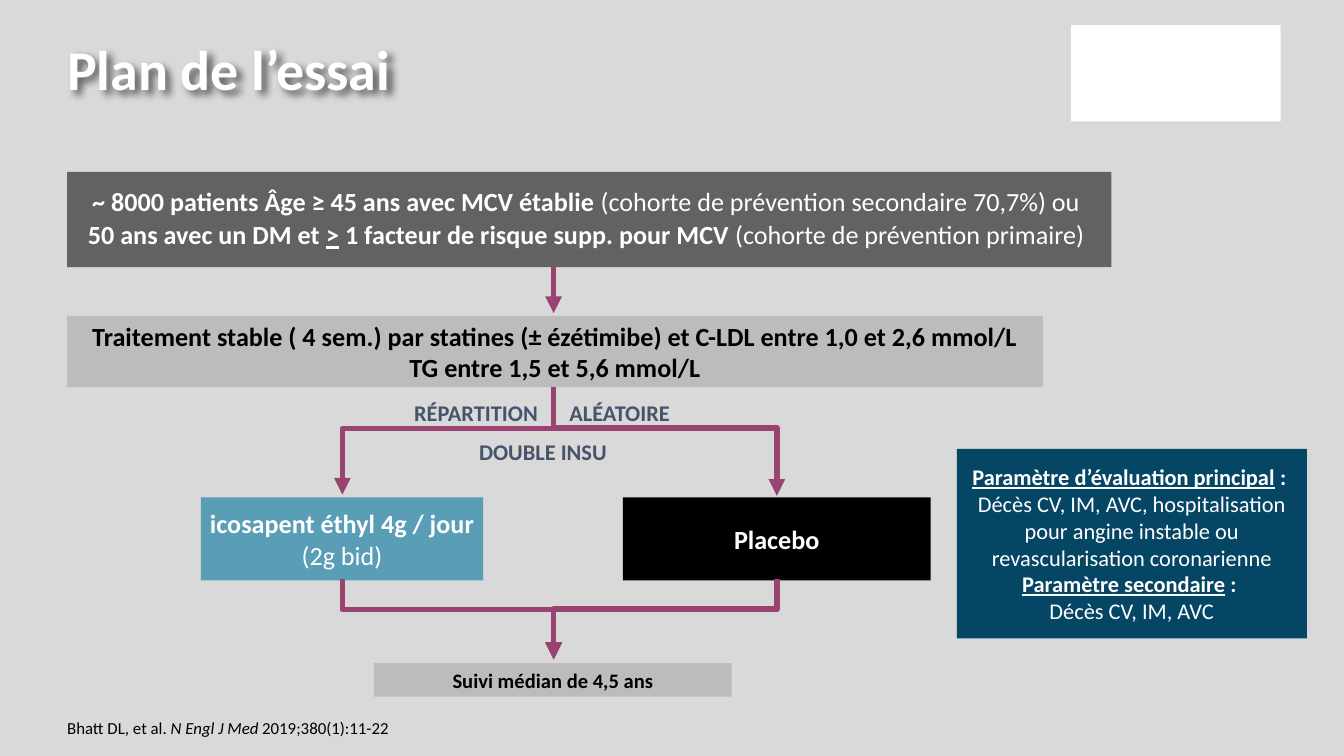
from pptx import Presentation
from pptx.dml.color import RGBColor
from pptx.enum.shapes import MSO_CONNECTOR as Line, MSO_SHAPE as Shape
from pptx.enum.text import MSO_ANCHOR as Anchor, PP_ALIGN as Align
from pptx.oxml import parse_xml
from pptx.oxml.ns import nsdecls
from pptx.util import Pt

FONT = "Calibri"
PLUM = "994371"
SLATE = "44546A"

# Content: each paragraph is a list of (text, style); b bold, u underline, i italic
TITLE = [[("Plan de l’essai", "b")]]
SOURCE = [[("Bhatt DL, et al. ", ""), ("N Engl J Med", "i"),
           (" 2019;380(1):11-22", "")]]
COHORT = [
    [("~ 8000 patients Âge ≥ 45 ans avec MCV établie ", "b"),
     ("(cohorte de prévention secondaire 70,7%) ou ", "")],
    [("50 ans avec un DM et ", "b"), (">", "bu"),
     (" 1 facteur de risque supp. pour MCV ", "b"),
     ("(cohorte de prévention primaire) ", "")],
]
STABLE = [
    [("Traitement stable ( 4 sem.) par statines (± ézétimibe) "
      "et C-LDL entre 1,0 et 2,6 mmol/L", "b")],
    [("TG entre 1,5 et 5,6 mmol/L", "b")],
]
DRUG = [[("icosapent éthyl 4g / jour", "b")], [("(2g bid)", "")]]
PLACEBO = [[("Placebo", "b")]]
FOLLOW = [[("Suivi médian de 4,5 ans", "b")]]
GOALS = [
    [("Paramètre d’évaluation principal", "bu"), (" : ", "b")],
    [("Décès CV, IM, AVC, hospitalisation pour angine instable "
      "ou revascularisation coronarienne", "")],
    [("Paramètre secondaire", "bu"), (" : ", "b")],
    [("Décès CV, IM, AVC", "")],
]

# Boxes: left, top, width, height, fill, alpha %, text, size, colour, insets (x, y)
BOXES = [
    (200.5, 355.3, 191.5, 18, "A1A1A1", 50, FOLLOW, 11, "000000", (7.2, 0)),
    (36, 169.2, 522.7, 38.2, "A1A1A1", 50, STABLE, 14, "000000", (7.2, 0)),
    (36, 92, 559.4, 51.1, "626262", 100, COHORT, 14, "FFFFFF", (2.9, 3.6)),
    (512.6, 240.5, 187.6, 101.5, "064665", 100, GOALS, 12, "FFFFFF", (7.2, 3.6)),
    (573.8, 13.5, 112.3, 51.6, "FFFFFF", 100, [], 12, "000000", (0, 0)),
    (107.7, 266.4, 151.2, 44.6, "5A9DB6", 100, DRUG, 14, "FFFFFF", (2.2, 3.6)),
    (333.7, 266.4, 164.9, 44.6, "000000", 100, PLACEBO, 14, "FFFFFF", (2.2, 3.6)),
]

# Arrows: axis of the chart and of its two arms
MID, LEFT, RIGHT = 296.6, 183.4, 416.2
ELBOWS = [  # start x, y, end x, y, share of the drop before the turn
    (MID, 207.4, LEFT, 265, 0.386),
    (MID, 208.1, RIGHT, 265.7, 0.371),
    (LEFT, 310, MID, 353, 0.386),
    (RIGHT, 310.3, MID, 353.5, 0.371),
]

# Words around the stem: text, left, top, width, alignment
GAP, WORD = 8.4, 80
SPLIT = [
    ("RÉPARTITION", MID - GAP - WORD, 213.3, WORD, Align.RIGHT),
    ("ALÉATOIRE", MID + GAP, 213.3, WORD, Align.LEFT),
    ("DOUBLE INSU", 204.5, 233.9, 172.8, Align.CENTER),
]

SHADOW = """<a:effectLst {}>
  <a:outerShdw blurRad="50800" dist="38100" dir="2700000" algn="tl">
    <a:srgbClr val="000000"><a:alpha val="60000"/></a:srgbClr>
  </a:outerShdw></a:effectLst>"""

deck = Presentation()
deck.slide_width, deck.slide_height = Pt(720), Pt(405)
slide = deck.slides.add_slide(deck.slide_layouts[6])
shapes = slide.shapes


def rgb(code):
    return RGBColor.from_string(code)


def node(xml):
    return parse_xml(xml.format(nsdecls("a")))


def write(shape, paras, size, color, inset=(0, 0), align=Align.CENTER):
    frame = shape.text_frame
    frame.word_wrap = True
    frame.vertical_anchor = Anchor.MIDDLE
    frame.margin_left = frame.margin_right = Pt(inset[0])
    frame.margin_top = frame.margin_bottom = Pt(inset[1])
    for k, parts in enumerate(paras):
        para = frame.add_paragraph() if k else frame.paragraphs[0]
        para.alignment = align
        for text, style in parts:
            run = para.add_run()
            run.text = text
            font = run.font
            font.name, font.size = FONT, Pt(size)
            font.bold, font.italic = "b" in style, "i" in style
            font.underline = "u" in style
            font.color.rgb = rgb(color)
    return frame.paragraphs


def label(left, top, width, height, *args, **opts):
    box = shapes.add_textbox(Pt(left), Pt(top), Pt(width), Pt(height))
    write(box, *args, **opts)
    return box


def arrow(kind, x1, y1, x2, y2):
    link = shapes.add_connector(kind, Pt(x1), Pt(y1), Pt(x2), Pt(y2))
    link.line.color.rgb = rgb(PLUM)
    link.line.width = Pt(3)
    prop = link._element.spPr
    prop.find("{*}ln").append(node('<a:tailEnd {} type="triangle"/>'))
    prop.append(node("<a:effectLst {}/>"))
    return prop


def elbow(x1, y1, x2, y2, turn):
    # An elbow runs sideways first, so it is laid flat and turned by 90 degrees
    cx, cy = (x1 + x2) / 2, (y1 + y2) / 2
    drop, side = (y2 - y1) / 2, (x1 - x2) / 2
    prop = arrow(Line.ELBOW, cx - drop, cy - side, cx + drop, cy + side)
    prop.find("{*}xfrm").set("rot", "5400000")
    guide = node('<a:gd {} name="adj1"/>')
    guide.set("fmla", f"val {round(turn * 100000)}")
    prop.find("{*}prstGeom/{*}avLst").append(guide)


# Background and title with its soft shadow
slide.background.fill.solid()
slide.background.fill.fore_color.rgb = rgb("D9D9D9")
head = label(36, 19.4, 522.7, 41, TITLE, 30, "FFFFFF", (0, 3.6), Align.LEFT)
head.text_frame.paragraphs[0].line_spacing = 0.8
head._element.spPr.append(node(SHADOW))

# Boxes
for left, top, width, height, fill, alpha, paras, size, color, inset in BOXES:
    box = shapes.add_shape(Shape.RECTANGLE, Pt(left), Pt(top), Pt(width), Pt(height))
    box.shadow.inherit = False
    box.line.fill.background()
    box.fill.solid()
    box.fill.fore_color.rgb = rgb(fill)
    if alpha < 100:
        tint = node("<a:alpha {}/>")
        tint.set("val", str(alpha * 1000))
        box._element.spPr.find("{*}solidFill/{*}srgbClr").append(tint)
    lines = write(box, paras, size, color, inset)
    if paras is COHORT:
        for para in lines:
            para.line_spacing = 0.9
        lines[1].space_before = Pt(3)

# Words around the stem, and the source
for text, left, top, width, align in SPLIT:
    label(left, top, width, 16, [[(text, "b")]], 12, SLATE, align=align)
label(36, 380.9, 280.8, 18, SOURCE, 9, "000000", align=Align.LEFT)

# Arrows
arrow(Line.STRAIGHT, MID, 143.3, MID, 167.8)
for route in ELBOWS:
    elbow(*route)

deck.save("out.pptx")
